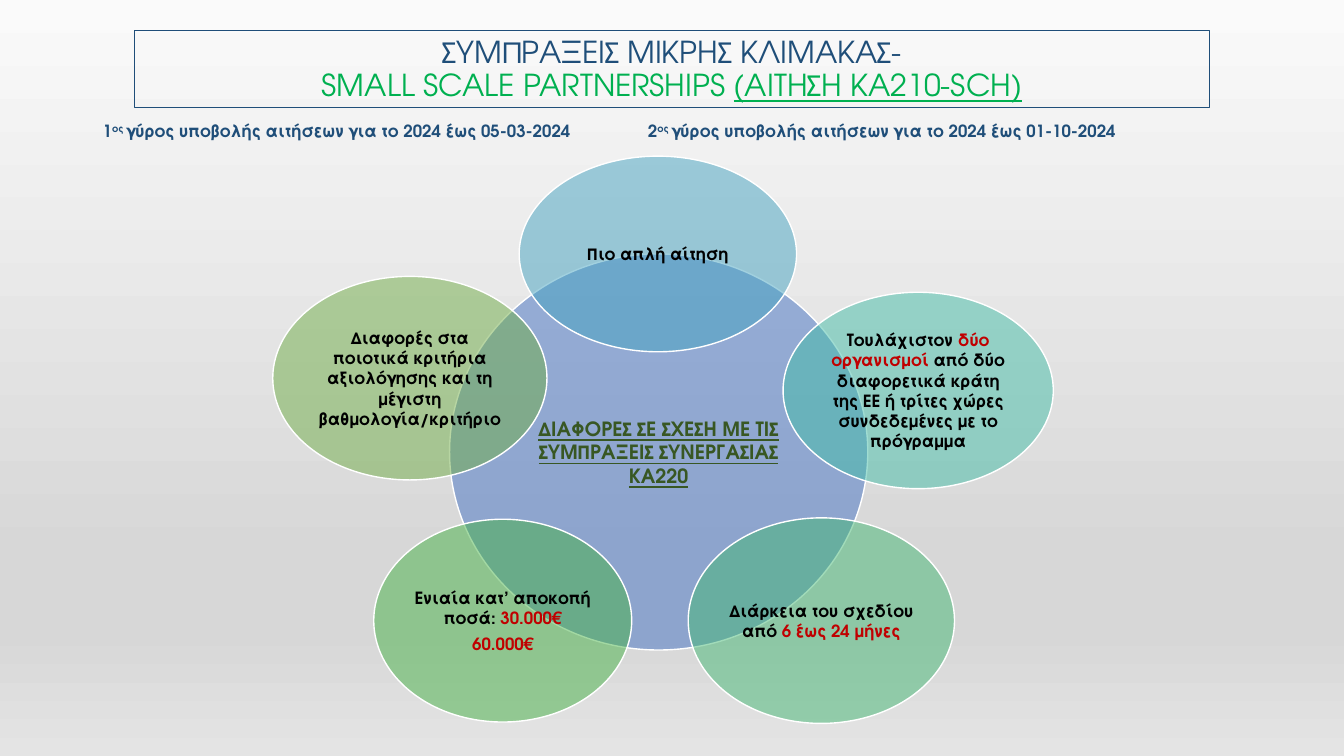
import pptx
import pptx.util
import pptx.dml.color
import pptx.enum.shapes
import pptx.enum.text
import pptx.oxml
import pptx.oxml.ns

Cm, Pt = pptx.util.Cm, pptx.util.Pt
ALIGN = pptx.enum.text.PP_ALIGN
ANCHOR = pptx.enum.text.MSO_ANCHOR
NAVY, GREEN, OLIVE = "1F4E79", "00B050", "385723"
BLACK, RED, WHITE = "000000", "C00000", "FFFFFF"


def color(code):
    return pptx.dml.color.RGBColor.from_string(code)


def child(node, tag, **attrs):
    """Append a DrawingML element with the given attributes."""
    item = pptx.oxml.parse_xml(f"<a:{tag} {pptx.oxml.ns.nsdecls('a')}/>")
    for key, value in attrs.items():
        item.set(key, str(value))
    node.append(item)
    return item


class Deck:
    font = "TeX Gyre Adventor"

    def __init__(self):
        self.prs = pptx.Presentation()
        self.prs.slide_width, self.prs.slide_height = Cm(33.87), Cm(19.05)
        self.slide = self.prs.slides.add_slide(self.prs.slide_layouts[6])

    def back(self, stops):
        """Fill the background with a gradient from top to bottom."""
        fill = self.slide.background.fill
        fill.gradient()
        fill.gradient_angle = 270
        grad = self.slide.element.find(".//" + pptx.oxml.ns.qn("a:gsLst"))
        for old in list(grad):
            grad.remove(old)
        for place, code in stops:
            stop = child(grad, "gs", pos=place * 1000)
            child(stop, "srgbClr", val=code)

    def label(self, para, runs, size, bold):
        """Add runs of (text, colour, style); style is "u", "sup" or ""."""
        for text, code, style in runs:
            run = para.add_run()
            run.text = text.rstrip("\n")
            font = run.font
            font.name, font.size, font.bold = self.font, Pt(size), bold
            font.color.rgb = color(code)
            if style == "u":
                font.underline = True
            if style == "sup":
                run._r.get_or_add_rPr().set("baseline", "30000")
            if text.endswith("\n"):
                para.add_line_break()

    def box(self, x, y, w, h, runs, size, bold=True):
        box = self.slide.shapes.add_textbox(Cm(x), Cm(y), Cm(w), Cm(h))
        box.text_frame.word_wrap = True
        self.label(box.text_frame.paragraphs[0], runs, size, bold)
        return box

    def oval(self, x, y, w, h, fill, paras, size=12):
        """Draw a half-transparent ellipse centred on (x, y)."""
        oval = self.slide.shapes.add_shape(
            pptx.enum.shapes.MSO_SHAPE.OVAL,
            Cm(x - w / 2), Cm(y - h / 2), Cm(w), Cm(h))
        oval.shadow.inherit = False
        oval.fill.solid()
        oval.fill.fore_color.rgb = color(fill)
        solid = oval.element.spPr.find(pptx.oxml.ns.qn("a:solidFill"))
        child(solid[0], "alpha", val=50000)
        oval.line.color.rgb = color(WHITE)
        oval.line.width = Pt(1)
        frame = oval.text_frame
        frame.word_wrap = True
        frame.vertical_anchor = ANCHOR.MIDDLE
        frame.margin_left = frame.margin_right = Cm(0.05)
        frame.margin_top = frame.margin_bottom = Cm(0.05)
        for i, runs in enumerate(paras):
            para = frame.add_paragraph() if i else frame.paragraphs[0]
            para.alignment = ALIGN.CENTER
            para.space_after = Pt(size * 0.35)
            self.label(para, runs, size, True)


def main():
    deck = Deck()
    deck.back([(0, "FAFAFA"), (74, "D7D7D7"), (83, "D7D7D7"), (100, "E4E4E4")])

    title = deck.box(3.39, 0.76, 27.1, 1.96, [
        ("ΣΥΜΠΡΑΞΕΙΣ ΜΙΚΡΗΣ ΚΛΙΜΑΚΑΣ-\n", NAVY, ""),
        ("SMALL SCALE PARTNERSHIPS ", GREEN, ""),
        ("(ΑΙΤΗΣΗ ΚΑ210-SCH)", GREEN, "u")], 21.6, False)
    title.line.color.rgb = color(NAVY)
    title.line.width = Pt(0.75)
    title.text_frame.vertical_anchor = ANCHOR.BOTTOM
    head = title.text_frame.paragraphs[0]
    head.alignment, head.line_spacing = ALIGN.CENTER, 0.9

    deck.oval(16.6, 11.39, 10.54, 9.98, "4472C4", [[
        ("ΔΙΑΦΟΡΕΣ ΣΕ ΣΧΕΣΗ ΜΕ ΤΙΣ ΣΥΜΠΡΑΞΕΙΣ ΣΥΝΕΡΓΑΣΙΑΣ ΚΑ220",
         OLIVE, "u")]], 14)

    petals = [
        (16.58, 6.4, 6.99, 4.93, "44A3C0", [[("Πιο απλή αίτηση", BLACK, "")]]),
        (23.14, 9.84, 6.81, 4.95, "43BDA7", [[
            ("Τουλάχιστον ", BLACK, ""), ("δύο οργανισμοί ", RED, ""),
            ("από δύο διαφορετικά κράτη της ΕΕ ή τρίτες χώρες "
             "συνδεδεμένες με το πρόγραμμα", BLACK, "")]]),
        (20.7, 15.64, 6.71, 5.18, "44B874", [[
            ("Διάρκεια του σχεδίου από ", BLACK, ""),
            ("6 έως 24 μήνες", RED, "")]]),
        (12.67, 15.64, 6.5, 5.11, "46B246", [
            [("Ενιαία κατ’ αποκοπή ποσά: ", BLACK, ""), ("30.000€", RED, "")],
            [("60.000€", RED, "")]]),
        (10.33, 9.53, 6.91, 5.13, "70AD47", [[
            ("Διαφορές στα ποιοτικά κριτήρια αξιολόγησης και τη μέγιστη "
             "βαθμολογία/κριτήριο", BLACK, "")]]),
    ]
    for petal in petals:
        deck.oval(*petal)

    term = "γύρος υποβολής αιτήσεων για το 2024 έως "
    dates = deck.box(2.34, 2.92, 29, 0.79, [
        ("1", NAVY, ""), ("ος ", NAVY, "sup"),
        (term + "05-03-2024\t2", NAVY, ""), ("ος ", NAVY, "sup"),
        (term + "01-10-2024", NAVY, "")], 12)
    props = dates.text_frame.paragraphs[0]._p.get_or_add_pPr()
    child(child(props, "tabLst"), "tab", pos=Cm(13.74), algn="l")

    deck.prs.save("out.pptx")


if __name__ == "__main__":
    main()
